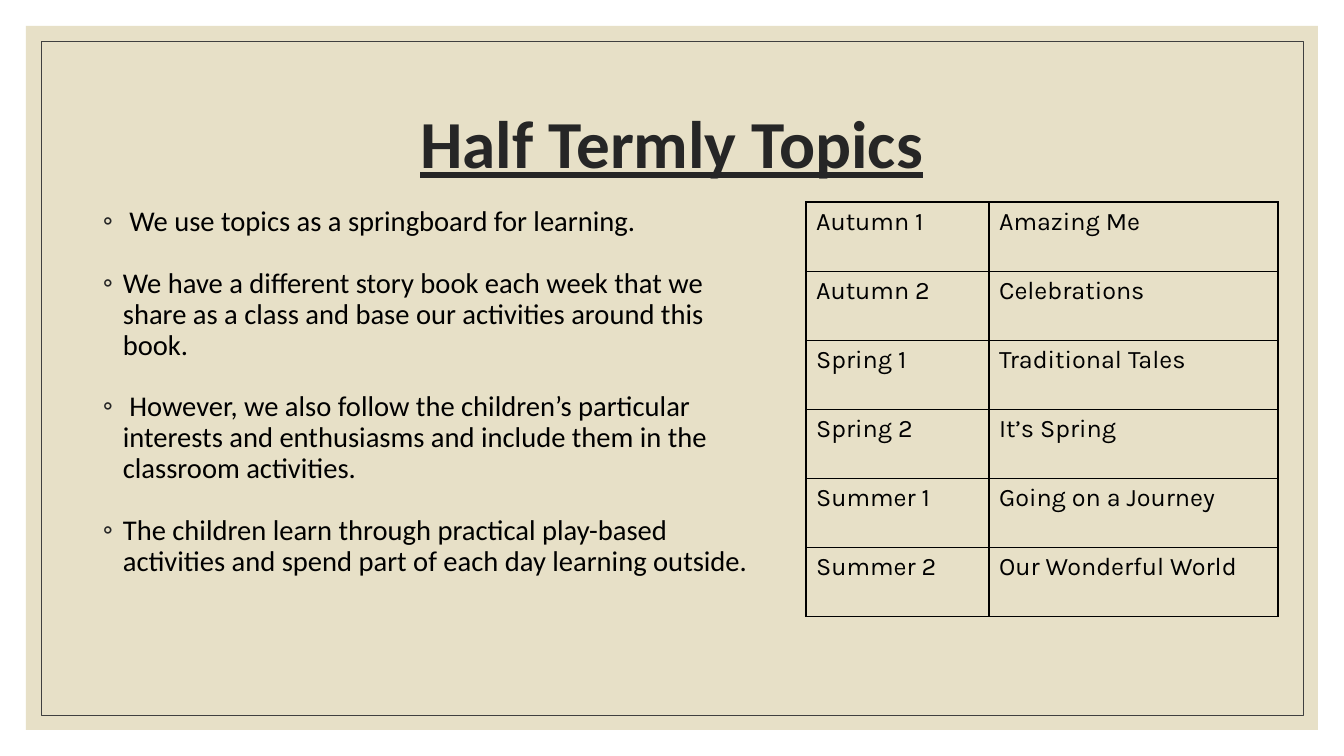
from dataclasses import dataclass

from lxml.etree import SubElement
from pptx import Presentation
from pptx.dml.color import RGBColor
from pptx.enum.shapes import MSO_SHAPE
from pptx.enum.text import MSO_ANCHOR, PP_ALIGN
from pptx.oxml.ns import qn
from pptx.util import Emu, Pt

PAGE_WIDTH, PAGE_HEIGHT = 1344, 756


@dataclass(frozen=True)
class Theme:
    sand: str = "E7E0C7"
    frame: str = "404040"
    heading: str = "262626"
    ink: str = "000000"
    text_font: str = "Calibri"
    table_font: str = "Karla"
    title_size: float = 48
    body_size: float = 20.4
    table_size: float = 18
    line_spacing: float = 0.9
    bullet_gap: float = 22
    frame_width: float = 0.5
    border_width: float = 1


THEME = Theme()

POINTS = [
    " We use topics as a springboard for learning.",
    "We have a different story book each week that we share as a class "
    "and base our activities around this book.",
    " However, we also follow the children’s particular interests and "
    "enthusiasms and include them in the classroom activities.",
    "The children learn through practical play-based activities and spend "
    "part of each day learning outside.",
]

TOPICS = [
    ("Autumn 1", "Amazing Me"),
    ("Autumn 2", "Celebrations"),
    ("Spring 1", "Traditional Tales"),
    ("Spring 2", "It’s Spring"),
    ("Summer 1", "Going on a Journey"),
    ("Summer 2", "Our Wonderful World"),
]


def px(length):
    return Emu(round(length * 914400 / 100.8))


def color(value):
    return RGBColor.from_string(value)


def style(paragraph, name, size, ink):
    font = paragraph.font
    font.name, font.size = name, Pt(size)
    font.color.rgb = color(ink)
    return font


def add_text_frame(page, box):
    frame = page.shapes.add_textbox(*map(px, box)).text_frame
    frame.word_wrap = True
    return frame


def add_backdrop(page, margin, frame_gap):
    """Draw the sand panel and the thin frame inside it."""
    for inset in (margin, margin + frame_gap):
        panel = page.shapes.add_shape(
            MSO_SHAPE.RECTANGLE, px(inset), px(inset),
            px(PAGE_WIDTH - 2 * inset), px(PAGE_HEIGHT - 2 * inset))
        panel.shadow.inherit = False
        if inset == margin:
            panel.fill.solid()
            panel.fill.fore_color.rgb = color(THEME.sand)
            panel.line.fill.background()
        else:
            panel.fill.background()
            panel.line.color.rgb = color(THEME.frame)
            panel.line.width = Pt(THEME.frame_width)


def add_title(page, box, text):
    frame = add_text_frame(page, box)
    frame.vertical_anchor = MSO_ANCHOR.MIDDLE
    para = frame.paragraphs[0]
    para.text = text
    para.alignment = PP_ALIGN.CENTER
    para.line_spacing = THEME.line_spacing
    font = style(para, THEME.text_font, THEME.title_size, THEME.heading)
    font.bold = font.underline = True


def add_bullet(para, indent):
    properties = para._p.get_or_add_pPr()
    properties.set("marL", str(px(indent)))
    properties.set("indent", str(-px(indent)))
    bullet_color = SubElement(properties, qn("a:buClr"))
    SubElement(bullet_color, qn("a:srgbClr"), val=THEME.heading)
    SubElement(properties, qn("a:buFont"), typeface=THEME.text_font)
    SubElement(properties, qn("a:buChar"), char="◦")


def add_points(page, box, points):
    frame = add_text_frame(page, box)
    for index, text in enumerate(points):
        para = frame.add_paragraph() if index else frame.paragraphs[0]
        para.text = text
        para.line_spacing = THEME.line_spacing
        if index:
            para.space_before = Pt(THEME.bullet_gap)
        add_bullet(para, 20)
        style(para, THEME.text_font, THEME.body_size, THEME.ink)


def add_borders(cell):
    properties = cell._tc.get_or_add_tcPr()
    for side in ("lnL", "lnR", "lnT", "lnB"):
        line = SubElement(properties, qn(f"a:{side}"),
                          w=str(Pt(THEME.border_width)))
        fill = SubElement(line, qn("a:solidFill"))
        SubElement(fill, qn("a:srgbClr"), val=THEME.ink)


def add_topic_table(page, box, first_width, topics):
    left, top, width, height = box
    table = page.shapes.add_table(
        len(topics), 2, px(left), px(top), px(width), px(height)).table
    table.first_row = table.horz_banding = False
    table.columns[0].width = px(first_width)
    table.columns[1].width = px(width - first_width)
    for row, texts in enumerate(topics):
        table.rows[row].height = px(height / len(topics))
        for column, text in enumerate(texts):
            cell = table.cell(row, column)
            cell.text = text
            add_borders(cell)
            cell.fill.background()
            style(cell.text_frame.paragraphs[0],
                  THEME.table_font, THEME.table_size, THEME.ink)


def main():
    deck = Presentation()
    deck.slide_width, deck.slide_height = px(PAGE_WIDTH), px(PAGE_HEIGHT)
    page = deck.slides.add_slide(deck.slide_layouts[6])
    add_backdrop(page, 26, 15)
    add_title(page, (118, 71, 1108, 151), "Half Termly Topics")
    add_points(page, (93, 202, 674, 351), POINTS)
    add_topic_table(page, (806, 202, 472, 415), 183, TOPICS)
    deck.save("out.pptx")


if __name__ == "__main__":
    main()
